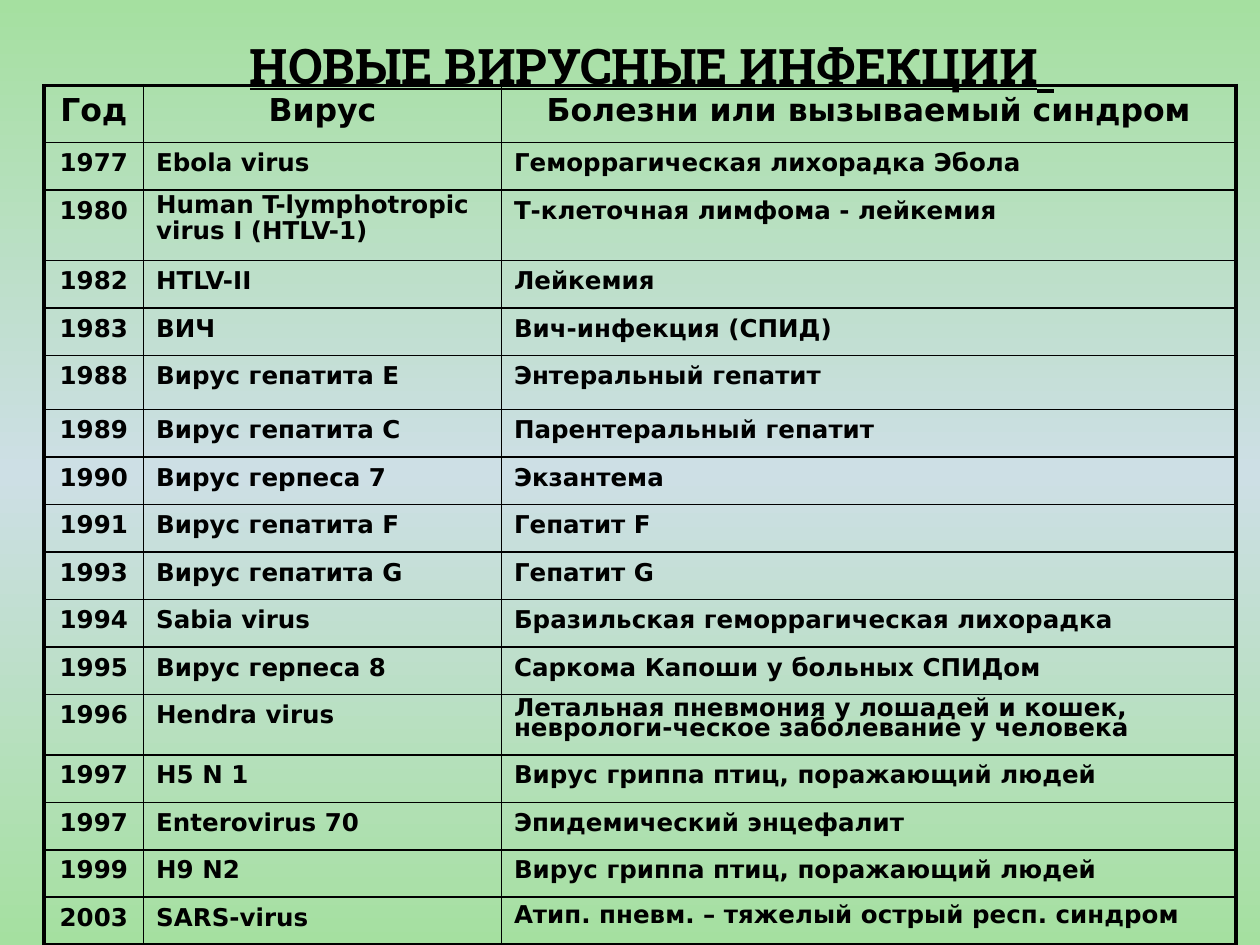
"""Build a slide with a table of newly discovered viral infections."""
import copy

import pptx
import pptx.dml.color
import pptx.enum.text
import pptx.oxml
import pptx.oxml.ns
import pptx.util

Inches = pptx.util.Inches
Pt = pptx.util.Pt
RGBColor = pptx.dml.color.RGBColor
CENTER = pptx.enum.text.PP_ALIGN.CENTER
LEFT = pptx.enum.text.PP_ALIGN.LEFT

BLACK = RGBColor(0x00, 0x00, 0x00)
GREEN = RGBColor(0xA5, 0xE0, 0xA0)
PALE_BLUE = RGBColor(0xCD, 0xDF, 0xE5)
BACKGROUND_STOPS = [(0, GREEN), (0.5, PALE_BLUE), (1, GREEN)]

TITLE = "НОВЫЕ ВИРУСНЫЕ ИНФЕКЦИИ"
ROWS = [
    ("Год", "Вирус", "Болезни или вызываемый синдром"),
    ("1977", "Ebola virus", "Геморрагическая лихорадка Эбола"),
    ("1980", "Human T-lymphotropic\nvirus I (HTLV-1)", "Т-клеточная лимфома - лейкемия"),
    ("1982", "HTLV-II", "Лейкемия"),
    ("1983", "ВИЧ", "Вич-инфекция (СПИД)"),
    ("1988", "Вирус гепатита Е", "Энтеральный гепатит"),
    ("1989", "Вирус гепатита С", "Парентеральный гепатит"),
    ("1990", "Вирус герпеса 7", "Экзантема"),
    ("1991", "Вирус гепатита F", "Гепатит F"),
    ("1993", "Вирус гепатита G", "Гепатит G"),
    ("1994", "Sabia virus", "Бразильская геморрагическая лихорадка"),
    ("1995", "Вирус герпеса 8", "Саркома Капоши у больных СПИДом"),
    ("1996", "Hendra virus",
     "Летальная пневмония у лошадей и кошек, неврологи-ческое заболевание у человека"),
    ("1997", "H5 N 1", "Вирус гриппа птиц, поражающий людей"),
    ("1997", "Enterovirus 70", "Эпидемический энцефалит"),
    ("1999", "H9 N2", "Вирус гриппа птиц, поражающий людей"),
    ("2003", "SARS-virus", "Атип. пневм. – тяжелый острый респ. синдром"),
]
COLUMN_WIDTHS = [0.79, 2.84, 5.83]
TABLE_LEFT, TABLE_TOP, TABLE_HEIGHT = 0.35, 0.68, 6.82
TALL_ROWS = {0: 0.45, 2: 0.56, 5: 0.43, 12: 0.48}
LINE_SPACINGS = {(2, 1): 0.75, (12, 2): 0.7, (16, 2): 0.85}
OUTER_LINE, INNER_LINE = 2.25, 1


def add_text(paragraph, text, size=14, font="DejaVu Sans", underline=False,
             align=LEFT, space_before=0, line_spacing=None):
    """Append a bold run to a paragraph and format both."""
    paragraph.alignment = align
    paragraph.space_before = Pt(space_before)
    paragraph.line_spacing = line_spacing
    run = paragraph.add_run()
    run.text = text
    run.font.name = font
    run.font.size = Pt(size)
    run.font.bold = True
    run.font.underline = underline
    run.font.color.rgb = BLACK


def set_borders(cell, widths):
    """Draw the four cell borders with the given widths in points."""
    properties = cell._tc.get_or_add_tcPr()
    for side, width in widths.items():
        properties.append(pptx.oxml.parse_xml(
            f'<a:ln{side} {pptx.oxml.ns.nsdecls("a")} w="{Pt(width)}"><a:solidFill>'
            f'<a:srgbClr val="{BLACK}"/></a:solidFill></a:ln{side}>'))


def paint_background(slide):
    """Fill the slide background with the vertical gradient."""
    fill = slide.background.fill
    fill.gradient()
    fill.gradient_angle = 90
    stop_list = slide.element.xpath(".//a:gsLst")[0]
    stop_list.insert(1, copy.deepcopy(stop_list[0]))
    for stop, (position, color) in zip(fill.gradient_stops, BACKGROUND_STOPS):
        stop.position = position
        stop.color.rgb = color


def add_title(slide):
    """Add the underlined heading with its larger trailing space."""
    frame = slide.shapes.add_textbox(
        Inches(0.35), Inches(0.21), Inches(9.65), Inches(0.47)).text_frame
    frame.word_wrap = True
    frame.auto_size = pptx.enum.text.MSO_AUTO_SIZE.NONE
    frame.vertical_anchor = pptx.enum.text.MSO_ANCHOR.MIDDLE
    for text, size in [(TITLE, 28), (" ", 40)]:
        add_text(frame.paragraphs[0], text, size=size, font="Roboto Slab",
                 underline=True, align=CENTER)


def add_virus_table(slide):
    """Add the table of years, viruses and diseases."""
    last_row, last_column = len(ROWS) - 1, len(COLUMN_WIDTHS) - 1
    table = slide.shapes.add_table(
        len(ROWS), len(COLUMN_WIDTHS), Inches(TABLE_LEFT), Inches(TABLE_TOP),
        Inches(sum(COLUMN_WIDTHS)), Inches(TABLE_HEIGHT)).table
    table.first_row = table.horz_banding = False
    for column, width in zip(table.columns, COLUMN_WIDTHS):
        column.width = Inches(width)
    usual_height = (TABLE_HEIGHT - sum(TALL_ROWS.values())) / (len(ROWS) - len(TALL_ROWS))
    for row_index, texts in enumerate(ROWS):
        table.rows[row_index].height = Inches(TALL_ROWS.get(row_index, usual_height))
        size = 18 if row_index == 0 else 14
        for column_index, text in enumerate(texts):
            cell = table.cell(row_index, column_index)
            outer_sides = {"L": column_index == 0, "R": column_index == last_column,
                           "T": row_index == 0, "B": row_index == last_row}
            set_borders(cell, {side: OUTER_LINE if outer else INNER_LINE
                               for side, outer in outer_sides.items()})
            cell.fill.background()
            centered = row_index == 0 or column_index == 0
            for line_index, line in enumerate(text.split("\n")):
                frame = cell.text_frame
                paragraph = frame.add_paragraph() if line_index else frame.paragraphs[0]
                add_text(paragraph, line, size=size, align=CENTER if centered else LEFT,
                         space_before=0.2 * size,
                         line_spacing=LINE_SPACINGS.get((row_index, column_index)))


def main():
    """Create the presentation and save it."""
    presentation = pptx.Presentation()
    presentation.slide_width = Inches(10)
    presentation.slide_height = Inches(7.5)
    slide = presentation.slides.add_slide(presentation.slide_layouts[6])
    paint_background(slide)
    add_title(slide)
    add_virus_table(slide)
    presentation.save("out.pptx")


if __name__ == "__main__":
    main()
